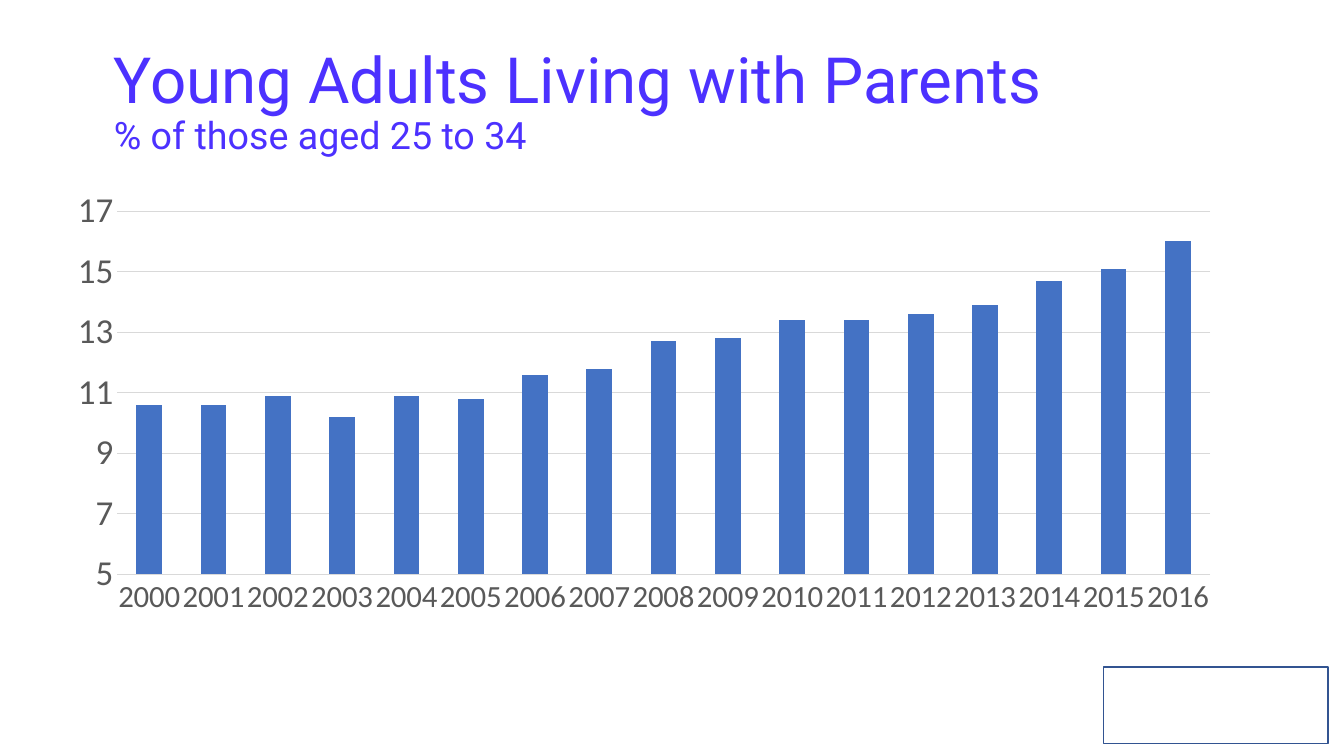
from pptx import Presentation
from pptx.chart.data import CategoryChartData
from pptx.dml.color import RGBColor
from pptx.enum.chart import XL_CHART_TYPE, XL_TICK_MARK
from pptx.enum.shapes import MSO_SHAPE
from pptx.enum.text import MSO_ANCHOR
from pptx.util import Cm, Pt

COLUMN_CLUSTERED = XL_CHART_TYPE.COLUMN_CLUSTERED
NO_TICKS = XL_TICK_MARK.NONE
RECTANGLE = MSO_SHAPE.RECTANGLE
BOTTOM = MSO_ANCHOR.BOTTOM

# Content
HEADING = [("Young Adults Living with Parents", 45.5), ("% of those aged 25 to 34", 26.9)]
FIRST_YEAR = 2000
SHARES = [10.6, 10.6, 10.9, 10.2, 10.9, 10.8, 11.6, 11.8, 12.7,
          12.8, 13.4, 13.4, 13.6, 13.9, 14.7, 15.1, 16]
COLORS = {"title": "4C31FF", "bar": "4472C4", "label": "595959",
          "grid": "D9D9D9", "white": "FFFFFF", "frame": "325491"}

# Left, top, width, height in centimetres
FRAME_BOX = (27.81, 16.81, 5.66, 1.93)
CHART_BOX = (1.37, 4.57, 29.72, 11.18)
TITLE_BOX = (2.62, 2.74, 27.84, 1.37)


def color(name):
    return RGBColor.from_string(COLORS[name])


def place(box):
    return [Cm(length) for length in box]


def style_line(line, name, width):
    line.color.rgb = color(name)
    line.width = Pt(width)


def style_axis(axis, size):
    axis.major_tick_mark = axis.minor_tick_mark = NO_TICKS
    font = axis.tick_labels.font
    font.name, font.size = "Calibri", Pt(size)
    font.color.rgb = color("label")


def add_corner_frame(slide):
    frame = slide.shapes.add_shape(RECTANGLE, *place(FRAME_BOX))
    frame.shadow.inherit = False
    frame.fill.solid()
    frame.fill.fore_color.rgb = color("white")
    style_line(frame.line, "frame", 1)


def add_share_chart(slide):
    data = CategoryChartData()
    data.categories = [str(FIRST_YEAR + i) for i in range(len(SHARES))]
    data.add_series("Series 1", SHARES)
    chart = slide.shapes.add_chart(COLUMN_CLUSTERED, *place(CHART_BOX), data).chart
    chart.has_legend = chart.has_title = False
    chart.font.name, chart.font.size = "Calibri", Pt(10)

    # Bars
    plot = chart.plots[0]
    plot.gap_width = 150
    plot.vary_by_categories = False
    fill = plot.series[0].format.fill
    fill.solid()
    fill.fore_color.rgb = color("bar")

    # Axes
    years, percent = chart.category_axis, chart.value_axis
    style_axis(years, 22)
    style_line(years.format.line, "grid", 0.75)
    style_axis(percent, 25)
    percent.format.line.fill.background()
    percent.minimum_scale, percent.maximum_scale = 5, 17
    percent.major_unit = 2
    percent.tick_labels.number_format = "General"
    percent.tick_labels.number_format_is_linked = False
    style_line(percent.major_gridlines.format.line, "grid", 0.75)


def add_heading(slide):
    text_frame = slide.shapes.add_textbox(*place(TITLE_BOX)).text_frame
    text_frame.word_wrap = True
    text_frame.vertical_anchor = BOTTOM
    paragraph = text_frame.paragraphs[0]
    paragraph.line_spacing = 0.9
    paragraph.font.name = "Roboto"
    paragraph.font.color.rgb = color("title")
    for i, (text, size) in enumerate(HEADING):
        if i:
            paragraph.add_line_break()
        run = paragraph.add_run()
        run.text = text
        run.font.size = Pt(size)


def main():
    presentation = Presentation()
    presentation.slide_width, presentation.slide_height = Cm(33.87), Cm(19.05)
    slide = presentation.slides.add_slide(presentation.slide_layouts[6])
    add_corner_frame(slide)
    add_share_chart(slide)
    add_heading(slide)
    presentation.save("out.pptx")


if __name__ == "__main__":
    main()
